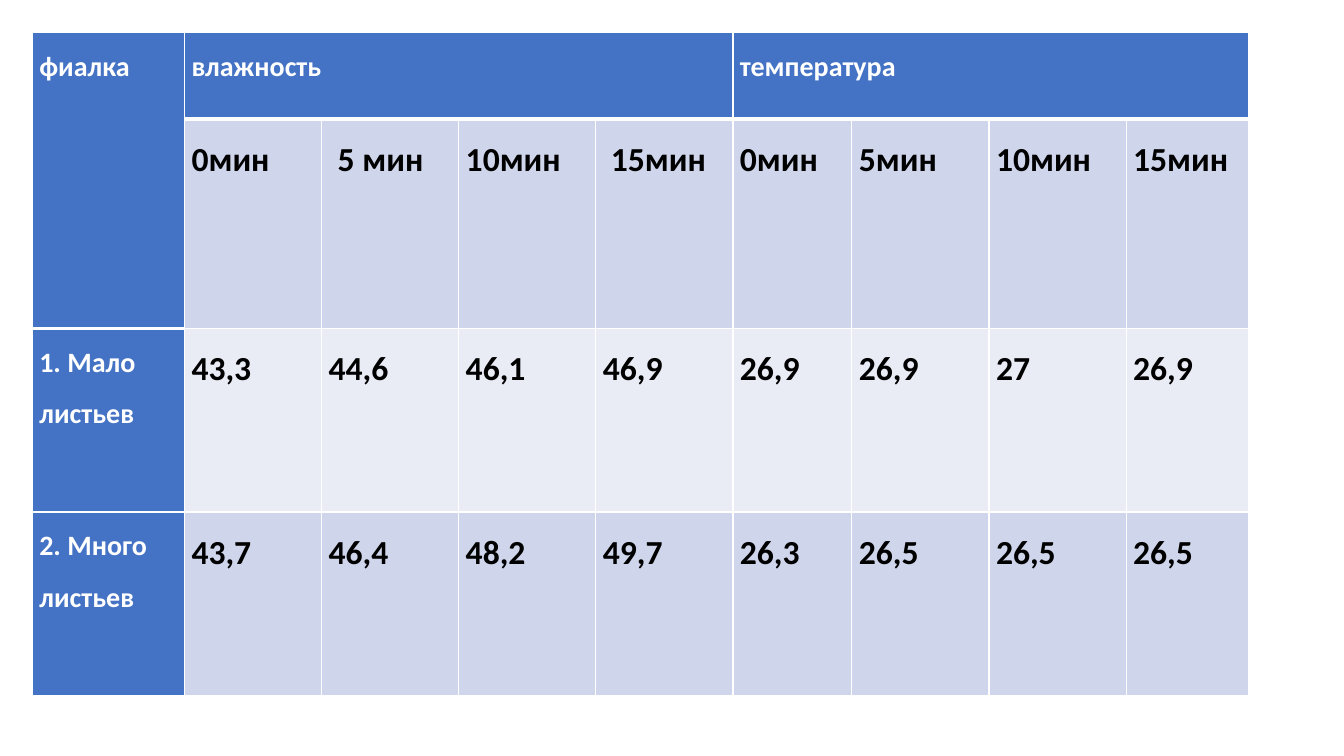
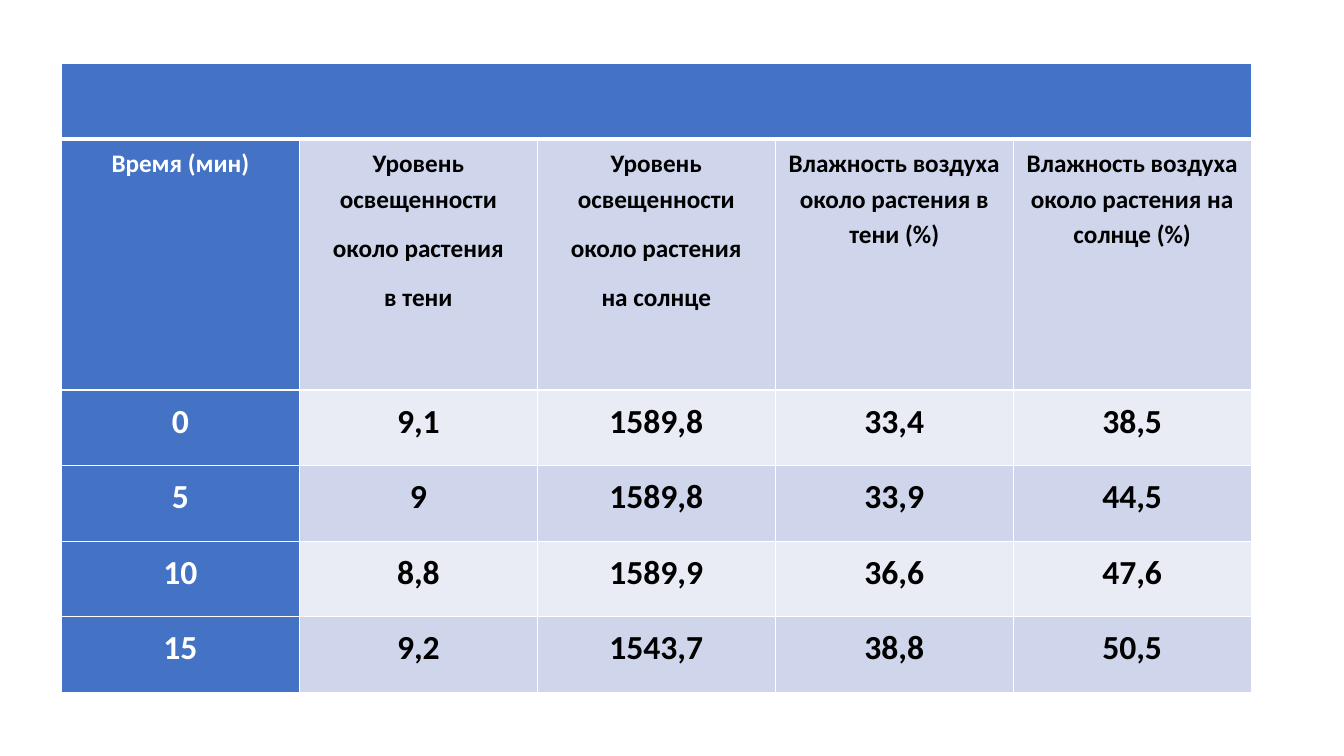
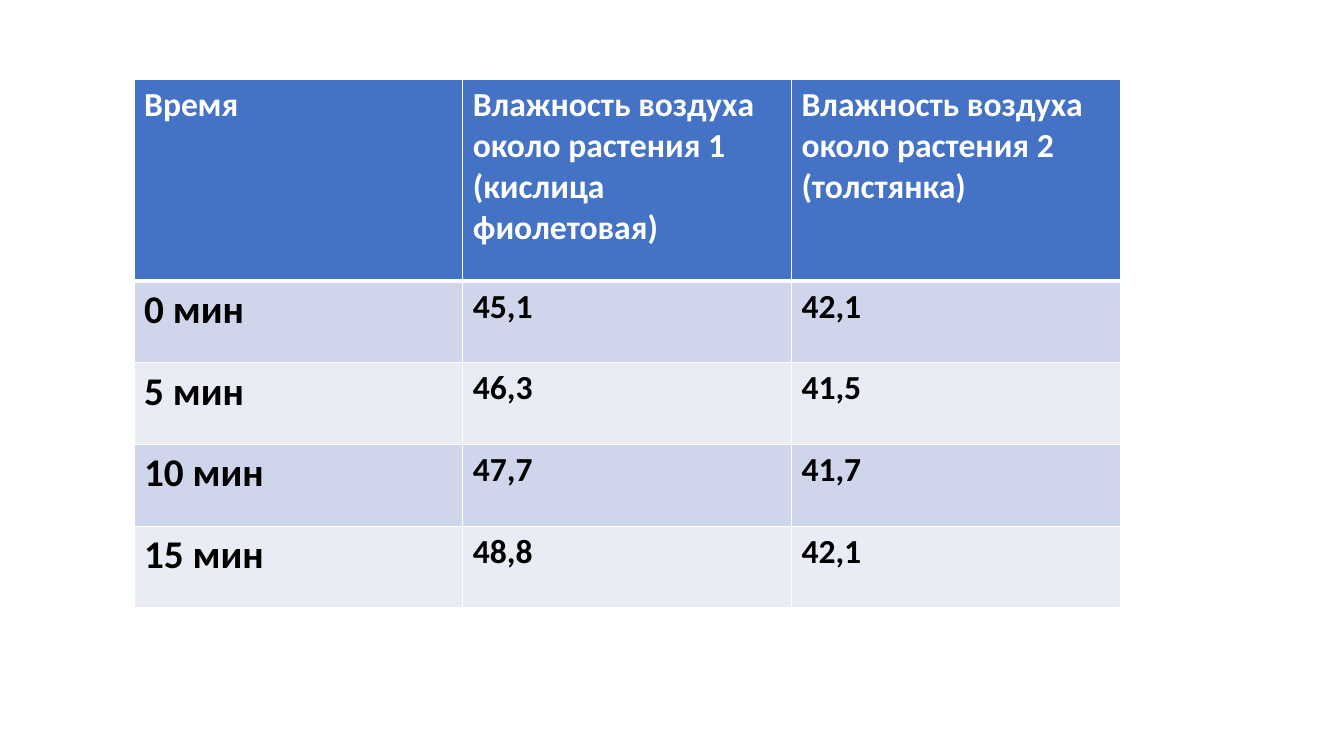
from lxml import etree
from pptx import Presentation
from pptx.dml.color import RGBColor
from pptx.enum.text import PP_ALIGN
from pptx.oxml.ns import qn
from pptx.util import Inches, Pt

CENTER = PP_ALIGN.CENTER
LEFT = PP_ALIGN.LEFT

# Shared look
FONT = "Calibri"
BLUE, WHITE, BLACK = "4472C4", "FFFFFF", "000000"
BANDS = ("E9EBF5", "CFD5EA")
THIN, THICK = 1, 3


def color(hex_code):
    return RGBColor.from_string(hex_code)


def set_borders(cell, top, bottom):
    tc_pr = cell._tc.get_or_add_tcPr()
    for tag, width in (("a:lnL", THIN), ("a:lnR", THIN), ("a:lnT", top), ("a:lnB", bottom)):
        ln = etree.SubElement(tc_pr, qn(tag), w=str(Pt(width)))
        fill = etree.SubElement(ln, qn("a:solidFill"))
        etree.SubElement(fill, qn("a:srgbClr"), val=WHITE)


def fill_text(cell, text, size, font_color, align, spacing, after, indent):
    tf = cell.text_frame
    for i, line in enumerate(text.split("\n")):
        p = tf.add_paragraph() if i else tf.paragraphs[0]
        p.alignment = align
        p.line_spacing = spacing
        p.space_after = Pt(after)
        if indent:
            p._p.get_or_add_pPr().set("marL", str(Inches(indent)))
        r = p.add_run()
        r.text = line
        r.font.name = FONT
        r.font.size = Pt(size)
        r.font.bold = True
        r.font.color.rgb = color(font_color)


def add_data_table(prs, left, top, widths, heights, rows, size_at, merges=(),
                   side_header=True, margins=(0.1, 0.05), align=LEFT,
                   spacing=1.0, after=0, indents=None):
    """Add a slide with one banded table; rows hold the text, None where merged."""
    slide = prs.slides.add_slide(prs.slide_layouts[6])
    table = slide.shapes.add_table(
        len(heights), len(widths), Inches(left), Inches(top),
        Inches(sum(widths)), Inches(sum(heights))).table
    for column, width in zip(table.columns, widths):
        column.width = Inches(width)
    for row, height in zip(table.rows, heights):
        row.height = Inches(height)

    # Merged cells; header_depth counts the header rows above each column's data
    header_depth = [1] * len(widths)
    for r0, c0, r1, c1 in merges:
        table.cell(r0, c0).merge(table.cell(r1, c1))
        header_depth[c0] = r1 + 1

    for r, texts in enumerate(rows):
        for c, text in enumerate(texts):
            cell = table.cell(r, c)
            header = r == 0 or (side_header and c == 0)
            set_borders(cell, THICK if r == header_depth[c] else THIN,
                        THICK if r < header_depth[c] else THIN)
            cell.fill.solid()
            cell.fill.fore_color.rgb = color(BLUE if header else BANDS[r % 2])
            cell.margin_left = cell.margin_right = Inches(margins[0])
            cell.margin_top = cell.margin_bottom = Inches(margins[1])
            if text:
                fill_text(cell, text, size_at(r, c), WHITE if header else BLACK,
                          align, spacing, after, (indents or {}).get((r, c)))


def violet_slide(prs):
    rows = [
        ["фиалка", "влажность", None, None, None, "температура", None, None, None],
        [None, "0мин", "5 мин", "10мин", "15мин", "0мин", "5мин", "10мин", "15мин"],
        ["1. Мало листьев", "43,3", "44,6", "46,1", "46,9", "26,9", "26,9", "27", "26,9"],
        ["2. Много листьев", "43,7", "46,4", "48,2", "49,7", "26,3", "26,5", "26,5", "26,5"],
    ]
    add_data_table(
        prs, 0.32, 0.32, [1.51] + [1.36] * 4 + [1.18, 1.36, 1.36, 1.22],
        [0.86, 2.08, 1.82, 1.82], rows,
        size_at=lambda r, c: 20 if r == 0 or c == 0 else 24,
        merges=[(0, 0, 1, 0), (0, 1, 0, 4), (0, 5, 0, 8)],
        margins=(0.07, 0), spacing=1.5, after=10,
        indents={(1, 2): 0.09, (1, 4): 0.08})


def light_slide(prs):
    rows = [
        [None] * 5,
        ["Время (мин)",
         "Уровень освещенности\nоколо растения\nв тени",
         "Уровень освещенности\nоколо растения\nна солнце",
         "Влажность воздуха около растения в тени (%)",
         "Влажность воздуха около растения на солнце (%)"],
        ["0", "9,1", "1589,8", "33,4", "38,5"],
        ["5", "9", "1589,8", "33,9", "44,5"],
        ["10", "8,8", "1589,9", "36,6", "47,6"],
        ["15", "9,2", "1543,7", "38,8", "50,5"],
    ]
    add_data_table(
        prs, 0.61, 0.63, [2.36] * 5, [0.75, 2.49] + [0.75] * 4, rows,
        size_at=lambda r, c: 18 if r == 1 else 24,
        merges=[(0, 0, 0, 4)], margins=(0.05, 0.05), align=CENTER,
        spacing=1.15, after=10)


def plants_slide(prs):
    rows = [
        ["Время",
         "Влажность воздуха около растения 1\n(кислица фиолетовая)",
         "Влажность воздуха около растения 2\n(толстянка)"],
        ["0 мин", "45,1", "42,1"],
        ["5 мин", "46,3", "41,5"],
        ["10 мин", "47,7", "41,7"],
        ["15 мин", "48,8", "42,1"],
    ]
    add_data_table(
        prs, 1.33, 0.79, [3.26] * 3, [2] + [0.81] * 4, rows,
        size_at=lambda r, c: 28 if r and c == 0 else 24, side_header=False)


def main():
    prs = Presentation()
    prs.slide_width = Inches(13.33)
    prs.slide_height = Inches(7.5)
    violet_slide(prs)
    light_slide(prs)
    plants_slide(prs)
    prs.save("out.pptx")


if __name__ == "__main__":
    main()
